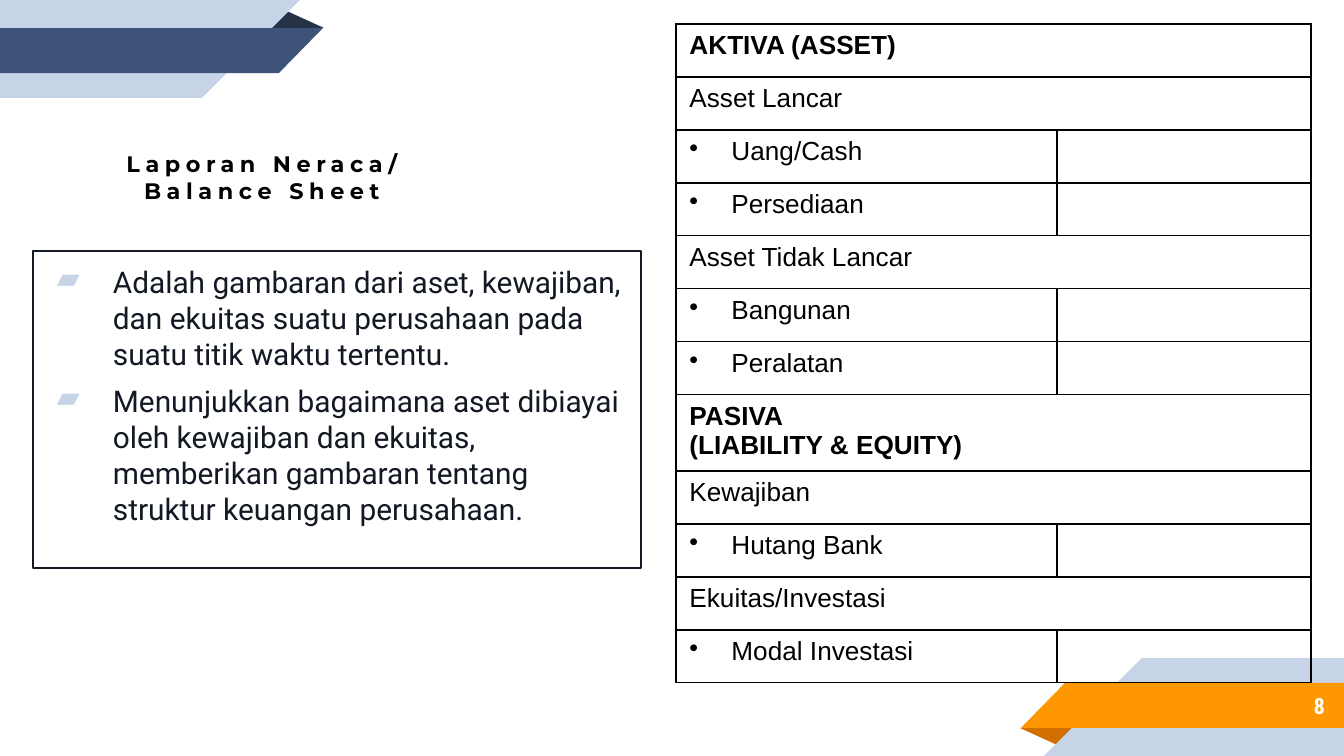
"""Builds the balance sheet slide with its account table."""
import pptx
import pptx.util
from lxml import etree
from pptx.dml.color import RGBColor
from pptx.enum.shapes import MSO_SHAPE
from pptx.enum.text import MSO_ANCHOR, MSO_AUTO_SIZE, PP_ALIGN
from pptx.oxml.ns import qn

PX = 914400 / 134.4
WIDTH, HEIGHT = 1344, 756
COLORS = {
    "black": "000000", "white": "FFFFFF", "ink": "131924", "pale": "C7D3E6",
    "blue": "3F5378", "navy": "263248", "orange": "FF9800", "rust": "D26F00",
}
TITLE = ["Laporan Neraca/", "Balance Sheet"]
POINTS = [
    "Adalah gambaran dari aset, kewajiban, dan ekuitas suatu perusahaan pada suatu titik waktu tertentu.",
    "Menunjukkan bagaimana aset dibiayai oleh kewajiban dan ekuitas, memberikan gambaran tentang struktur keuangan perusahaan.",
]
ROWS = [
    ("head", ["AKTIVA (ASSET)"]),
    ("group", ["Asset Lancar"]),
    ("item", ["Uang/Cash"]),
    ("item", ["Persediaan"]),
    ("group", ["Asset Tidak Lancar"]),
    ("item", ["Bangunan"]),
    ("item", ["Peralatan"]),
    ("head", ["PASIVA", "(LIABILITY & EQUITY)"]),
    ("group", ["Kewajiban"]),
    ("item", ["Hutang Bank"]),
    ("group", ["Ekuitas/Investasi"]),
    ("item", ["Modal Investasi"]),
]
COLUMNS = [381, 254]
ROW_HEIGHTS = {1: 53, 2: 76}
RIBBON = [
    ("fold", MSO_SHAPE.ISOSCELES_TRIANGLE, (266, 10, 58, 18)),
    ("back", MSO_SHAPE.RECTANGLE, (0, 0, 202, 98)),
    ("back", MSO_SHAPE.RIGHT_TRIANGLE, (202, 0, 98, 98)),
    ("front", MSO_SHAPE.RECTANGLE, (0, 28, 279, 45)),
    ("front", MSO_SHAPE.RIGHT_TRIANGLE, (279, 28, 44, 45)),
]
CORNERS = [
    (False, {"fold": "navy", "back": "pale", "front": "blue"}),
    (True, {"fold": "rust", "back": "pale", "front": "orange"}),
]
FORMATS = {
    "title": {"name": "Montserrat", "size": 12, "bold": True, "color": "black"},
    "body": {"name": "Roboto", "size": 16, "bold": False, "color": "ink"},
    "number": {"name": "Roboto Condensed", "size": 12, "bold": True, "color": "white"},
    "head": {"name": "Arial", "size": 14, "bold": True, "color": "black"},
    "group": {"name": "Arial", "size": 14, "bold": False, "color": "black"},
}
FORMATS["item"] = FORMATS["group"]


def px(n):
    return pptx.util.Emu(round(n * PX))


def rgb(name):
    return RGBColor.from_string(COLORS[name])


def write(tf, lines, style, align=PP_ALIGN.LEFT):
    for i, line in enumerate(lines):
        p = tf.paragraphs[0] if i == 0 else tf.add_paragraph()
        p.alignment = align
        r = p.add_run()
        r.text = line
        for key, value in FORMATS[style].items():
            if key == "color":
                r.font.color.rgb = rgb(value)
            else:
                setattr(r.font, key, pptx.util.Pt(value) if key == "size" else value)


def add_bullet(p, char, color, margin, hang):
    pPr = p._p.get_or_add_pPr()
    pPr.set("marL", str(px(margin)))
    pPr.set("indent", str(-px(hang)))
    clr = etree.SubElement(pPr, qn("a:buClr"))
    etree.SubElement(clr, qn("a:srgbClr"), val=COLORS[color])
    etree.SubElement(pPr, qn("a:buChar"), char=char)


def set_insets(tf, inset):
    for side in ("left", "top", "right", "bottom"):
        setattr(tf, f"margin_{side}", px(inset))


def add_ribbon(s, turned, colors):
    for part, kind, (x, y, w, h) in RIBBON:
        if turned:
            x, y = WIDTH - x - w, HEIGHT - y - h
        sp = s.shapes.add_shape(kind, px(x), px(y), px(w), px(h))
        sp.shadow.inherit = False
        sp.fill.solid()
        sp.fill.fore_color.rgb = rgb(colors[part])
        sp.line.fill.background()
        if part == "fold":
            sp.adjustments[0] = 0.32
            sp.rotation = 180 if turned else 0
        else:
            sp.rotation = 0 if turned else 180
            sp._element.spPr.get_or_add_xfrm().set("flipH", "1")


def format_cell(cell):
    tcPr = cell._tc.get_or_add_tcPr()
    for side in ("lnL", "lnR", "lnT", "lnB"):
        ln = etree.SubElement(tcPr, qn(f"a:{side}"), w=str(pptx.util.Pt(0.75)))
        fill = etree.SubElement(ln, qn("a:solidFill"))
        etree.SubElement(fill, qn("a:srgbClr"), val=COLORS["black"])
    cell.fill.background()


def add_accounts(s):
    heights = [ROW_HEIGHTS[len(lines)] for _, lines in ROWS]
    frame = s.shapes.add_table(len(ROWS), len(COLUMNS), px(676), px(24), px(sum(COLUMNS)), px(sum(heights)))
    table = frame.table
    table.first_row = table.horz_banding = False
    for column, width in zip(table.columns, COLUMNS):
        column.width = px(width)
    for i, (style, lines) in enumerate(ROWS):
        table.rows[i].height = px(heights[i])
        label, amount = table.cell(i, 0), table.cell(i, 1)
        for cell in (label, amount):
            format_cell(cell)
        write(label.text_frame, lines, style)
        etree.SubElement(amount.text_frame.paragraphs[0]._p, qn("a:endParaRPr"), sz="1400")
        if style == "item":
            add_bullet(label.text_frame.paragraphs[0], "•", "black", 42, 42)
        else:
            label.merge(amount)


def add_title(s):
    tf = s.shapes.add_textbox(px(79), px(144), px(366), px(67)).text_frame
    tf.word_wrap = True
    tf.auto_size = MSO_AUTO_SIZE.SHAPE_TO_FIT_TEXT
    write(tf, TITLE, "title", PP_ALIGN.CENTER)
    for p in tf.paragraphs:
        p.runs[0].font._element.set("spc", "300")


def add_points(s):
    sp = s.shapes.add_shape(MSO_SHAPE.RECTANGLE, px(33), px(251), px(608), px(317))
    sp.shadow.inherit = False
    sp.fill.background()
    sp.line.color.rgb = rgb("ink")
    sp.line.width = pptx.util.Pt(0.75)
    tf = sp.text_frame
    tf.word_wrap = True
    tf.vertical_anchor = MSO_ANCHOR.TOP
    set_insets(tf, 13)
    write(tf, POINTS, "body")
    for p in tf.paragraphs:
        p.space_before = pptx.util.Pt(6)
        add_bullet(p, "▰", "pale", 67, 56)


def add_number(s):
    tf = s.shapes.add_textbox(px(1119), px(682), px(219), px(47)).text_frame
    tf.word_wrap = True
    tf.vertical_anchor = MSO_ANCHOR.MIDDLE
    set_insets(tf, 13)
    write(tf, ["8"], "number", PP_ALIGN.RIGHT)


def main():
    prs = pptx.Presentation()
    prs.slide_width, prs.slide_height = px(WIDTH), px(HEIGHT)
    s = prs.slides.add_slide(prs.slide_layouts[6])
    for turned, colors in CORNERS:
        add_ribbon(s, turned, colors)
    add_number(s)
    add_title(s)
    add_accounts(s)
    add_points(s)
    prs.save("out.pptx")


if __name__ == "__main__":
    main()
